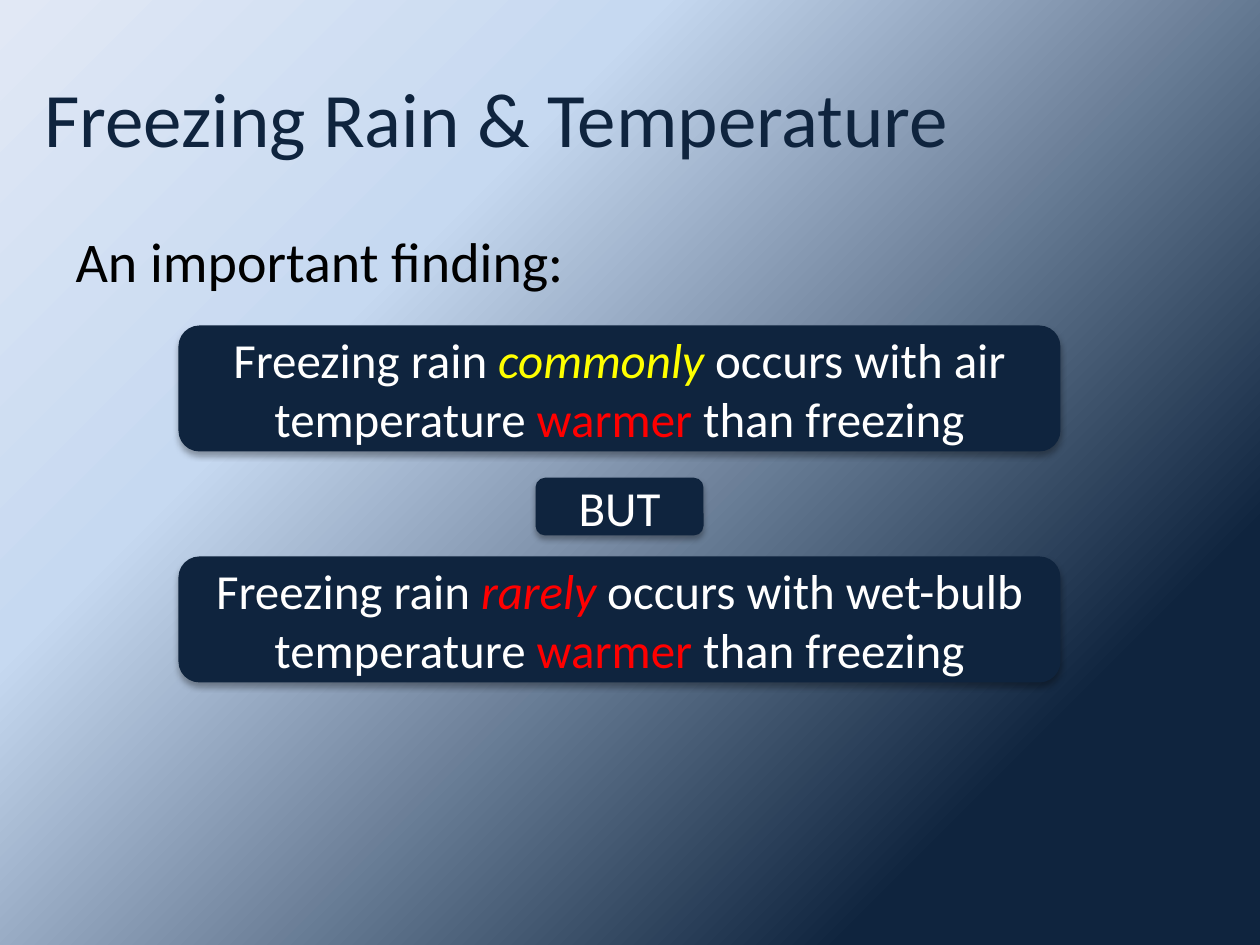
"""Build a slide on freezing rain and temperature."""
from lxml import etree
from pptx import Presentation
from pptx.dml.color import RGBColor
from pptx.enum.shapes import MSO_SHAPE
from pptx.enum.text import MSO_ANCHOR, PP_ALIGN
from pptx.oxml.ns import qn
from pptx.util import Pt

ROUNDED = MSO_SHAPE.ROUNDED_RECTANGLE
MIDDLE, TOP = MSO_ANCHOR.MIDDLE, MSO_ANCHOR.TOP
LEFT, CENTER = PP_ALIGN.LEFT, PP_ALIGN.CENTER
FONT = "Calibri"
COLORS = {
    "navy": "0F243E",
    "blue": "C6D9F1",
    "pale": "E1E8F5",
    "black": "000000",
    "white": "FFFFFF",
    "yellow": "FFFF00",
    "red": "FF0000",
}
BACKGROUND_STOPS = ((19, "navy"), (70, "blue"), (100, "pale"))
STATEMENT_LEFT, STATEMENT_WIDTH, STATEMENT_HEIGHT = 102, 504, 72
BUT_WIDTH, BUT_HEIGHT = 96, 33


def add_color(parent, name):
    """Append a colour element to an XML parent and return it."""
    return etree.SubElement(parent, qn("a:srgbClr"), val=COLORS[name])


def set_background(page):
    """Fill the page with the diagonal gradient."""
    page.background.fill.gradient()
    gradient = next(page.element.iter(qn("a:gradFill")))
    stops = gradient.find(qn("a:gsLst"))
    for stop in list(stops):
        stops.remove(stop)
    for percent, name in BACKGROUND_STOPS:
        add_color(etree.SubElement(stops, qn("a:gs"), pos=str(percent * 1000)), name)
    line = gradient.find(qn("a:lin"))
    line.set("ang", str(225 * 60000))
    line.set("scaled", "0")


def write_text(box, *spans, size, color, align=LEFT, anchor=MIDDLE):
    """Write spans, each (text, colour, italic) or plain text, into a box."""
    frame = box.text_frame
    frame.word_wrap = True
    frame.vertical_anchor = anchor
    para = frame.paragraphs[0]
    para.alignment = align
    for item in spans:
        text, name, italic = (item, color, False) if isinstance(item, str) else item
        span = para.add_run()
        span.text = text
        span.font.name = FONT
        span.font.size = Pt(size)
        span.font.italic = italic
        span.font.color.rgb = RGBColor.from_string(COLORS[name])
    return para


def place(box, left, top, width, height):
    """Move and size a placeholder in points."""
    box.left, box.top, box.width, box.height = map(Pt, (left, top, width, height))


def remove_bullet(para):
    """Take the bullet and the indent off a paragraph."""
    properties = para._p.get_or_add_pPr()
    properties.set("marL", "0")
    properties.set("indent", "0")
    etree.SubElement(properties, qn("a:buNone"))


def add_shadow(box):
    """Give a box a soft shadow straight below it."""
    box.shadow.inherit = False
    effects = box._element.spPr.find(qn("a:effectLst"))
    shadow = etree.SubElement(
        effects, qn("a:outerShdw"), blurRad=str(Pt(3.5)), dist=str(Pt(2.2)),
        dir=str(90 * 60000), rotWithShape="0")
    etree.SubElement(add_color(shadow, "black"), qn("a:alpha"), val="32000")


def add_panel(page, left, top, width, height, *spans):
    """Add a rounded navy panel with centred text."""
    panel = page.shapes.add_shape(ROUNDED, Pt(left), Pt(top), Pt(width), Pt(height))
    panel.fill.solid()
    panel.fill.fore_color.rgb = RGBColor.from_string(COLORS["navy"])
    panel.line.fill.background()
    add_shadow(panel)
    write_text(panel, *spans, size=28, color="white", align=CENTER)


def add_statement(page, top, frequency, color, measure):
    """Add a panel saying how often freezing rain occurs."""
    add_panel(page, STATEMENT_LEFT, top, STATEMENT_WIDTH, STATEMENT_HEIGHT,
              "Freezing rain ", (frequency, color, True),
              f" occurs with {measure} temperature ",
              ("warmer", "red", False), " than freezing")


def main():
    """Build and save the deck."""
    deck = Presentation()
    deck.slide_width, deck.slide_height = Pt(720), Pt(540)
    page = deck.slides.add_slide(deck.slide_layouts[1])
    set_background(page)

    title, body = page.placeholders
    place(title, 18, 21.6, 648, 90)
    write_text(title, "Freezing Rain & Temperature", size=44, color="navy")
    place(body, 36, 126, 648, 356.4)
    remove_bullet(write_text(body, "An important finding:", size=32,
                             color="black", anchor=TOP))

    add_statement(page, 186, "commonly", "yellow", "air")
    add_statement(page, 318, "rarely", "red", "wet-bulb")
    but_left = STATEMENT_LEFT + (STATEMENT_WIDTH - BUT_WIDTH) / 2
    add_panel(page, but_left, 273, BUT_WIDTH, BUT_HEIGHT, "BUT")
    deck.save("out.pptx")


if __name__ == "__main__":
    main()
